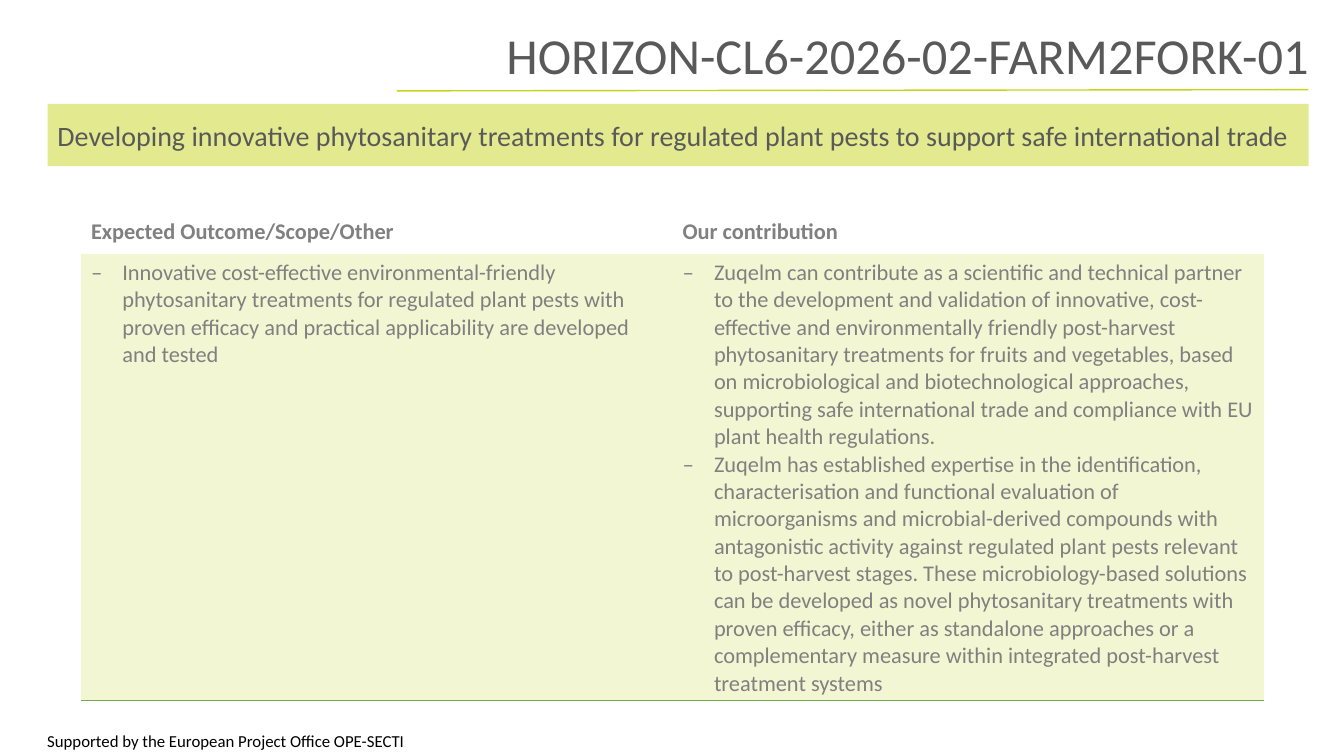
from lxml import etree
from pptx import Presentation
from pptx.dml import color
from pptx.enum import shapes, text
from pptx.oxml import ns
from pptx.util import Cm, Pt

FONT = "Calibri"
LIME, GREEN, GREY, DARK = "C7D41E", "70AD47", "808080", "595959"
NO_STYLE = "{2D5ABB26-0587-4C30-8999-92F81FD0307C}"
HEADINGS = ["Expected Outcome/Scope/Other", "Our contribution"]
BODIES = [
    ["Innovative cost-effective environmental-friendly phytosanitary treatments for regulated "
     "plant pests with proven efficacy and practical applicability are developed and tested"],
    ["Zuqelm can contribute as a scientific and technical partner to the development and "
     "validation of innovative, cost-effective and environmentally friendly post-harvest "
     "phytosanitary treatments for fruits and vegetables, based on microbiological and "
     "biotechnological approaches, supporting safe international trade and compliance with "
     "EU plant health regulations.",
     "Zuqelm has established expertise in the identification, characterisation and functional "
     "evaluation of microorganisms and microbial-derived compounds with antagonistic activity "
     "against regulated plant pests relevant to post-harvest stages. These microbiology-based "
     "solutions can be developed as novel phytosanitary treatments with proven efficacy, either "
     "as standalone approaches or a complementary measure within integrated post-harvest "
     "treatment systems"],
]


def rgb(value):
    """Turn a hex string into a colour."""
    return color.RGBColor.from_string(value)


def add_element(parent, tag, **attributes):
    """Append a DrawingML element and return it."""
    return etree.SubElement(parent, ns.qn(tag), **attributes)


def fill_tint(fill, holder, value, percent):
    """Apply a solid fill with the given opacity."""
    fill.solid()
    fill.fore_color.rgb = rgb(value)
    shade = holder.find(ns.qn("a:solidFill")).find(ns.qn("a:srgbClr"))
    add_element(shade, "a:alpha", val=str(percent * 1000))


def add_span(para, wording, size, value, bold=False):
    """Add one formatted run to a paragraph."""
    span = para.add_run()
    span.text = wording
    span.font.name, span.font.size, span.font.bold = FONT, Pt(size), bold
    span.font.color.rgb = rgb(value)


def add_label(page, place, wording, size, value, spacing,
              align=text.PP_ALIGN.LEFT, anchor=text.MSO_ANCHOR.TOP):
    """Add a wrapped single-paragraph text box."""
    frame = page.shapes.add_textbox(*map(Cm, place)).text_frame
    frame.word_wrap, frame.vertical_anchor = True, anchor
    para = frame.paragraphs[0]
    para.alignment, para.line_spacing = align, spacing
    add_span(para, wording, size, value)


def add_banner(page, place, wording):
    """Add the tinted topic bar."""
    box = page.shapes.add_shape(shapes.MSO_SHAPE.RECTANGLE, *map(Cm, place))
    box.shadow.inherit = False
    box.line.fill.background()
    fill_tint(box.fill, box.element.spPr, LIME, 50)
    frame = box.text_frame
    frame.word_wrap, frame.vertical_anchor = True, text.MSO_ANCHOR.MIDDLE
    frame.paragraphs[0].alignment = text.PP_ALIGN.LEFT
    add_span(frame.paragraphs[0], wording, 20, DARK)


def add_rule(page, *ends):
    """Add the thin line under the title."""
    line = page.shapes.add_connector(shapes.MSO_CONNECTOR.STRAIGHT, *map(Cm, ends))
    line.line.color.rgb, line.line.width = rgb(LIME), Pt(1)
    add_element(line.element.spPr, "a:effectLst")


def add_dash(para):
    """Give a paragraph a hanging dash."""
    settings = para._p.get_or_add_pPr()
    settings.set("marL", str(Cm(0.79)))
    settings.set("indent", str(-Cm(0.79)))
    add_element(settings, "a:buFont", typeface=FONT)
    add_element(settings, "a:buChar", char="‒")


def fill_body(cell, points):
    """Fill a body cell with dashed points, a tint and a bottom border."""
    frame = cell.text_frame
    for index, point in enumerate(points):
        para = frame.add_paragraph() if index else frame.paragraphs[0]
        add_dash(para)
        add_span(para, point, 16, GREY)
    settings = cell._tc.get_or_add_tcPr()
    border = add_element(settings, "a:lnB", w=str(Pt(1)))
    add_element(add_element(border, "a:solidFill"), "a:srgbClr", val=GREEN)
    fill_tint(cell.fill, settings, LIME, 20)


def add_contributions(page):
    """Add the table of outcomes and contributions."""
    frame = page.shapes.add_table(2, 2, Cm(2.04), Cm(5.36), Cm(29.82), Cm(12.3))
    table = frame.table
    table.first_row = table.horz_banding = False
    table._tbl.tblPr.find(ns.qn("a:tableStyleId")).text = NO_STYLE
    table.rows[0].height, table.rows[1].height = Cm(1.04), Cm(11.26)
    for column, (heading, points) in enumerate(zip(HEADINGS, BODIES)):
        top = table.cell(0, column)
        top.fill.background()
        add_span(top.text_frame.paragraphs[0], heading, 16, GREY, True)
        fill_body(table.cell(1, column), points)


def main():
    """Build and save the slide."""
    deck = Presentation()
    deck.slide_width, deck.slide_height = Cm(33.87), Cm(19.05)
    page = deck.slides.add_slide(deck.slide_layouts[6])
    add_label(page, (0.94, 18.24, 9.86, 0.81),
              "Supported by the European Project Office OPE-SECTI", 12, "000000", 1.1)
    add_contributions(page)
    add_rule(page, 10, 2.29, 32.97, 2.26)
    add_label(page, (11.18, 0.46, 22.07, 1.83), "HORIZON-CL6-2026-02-FARM2FORK-01",
              36, DARK, 0.9, text.PP_ALIGN.RIGHT, text.MSO_ANCHOR.BOTTOM)
    add_banner(page, (1.2, 2.62, 31.78, 1.57),
               "Developing innovative phytosanitary treatments for regulated plant pests "
               "to support safe international trade")
    deck.save("out.pptx")


if __name__ == "__main__":
    main()
